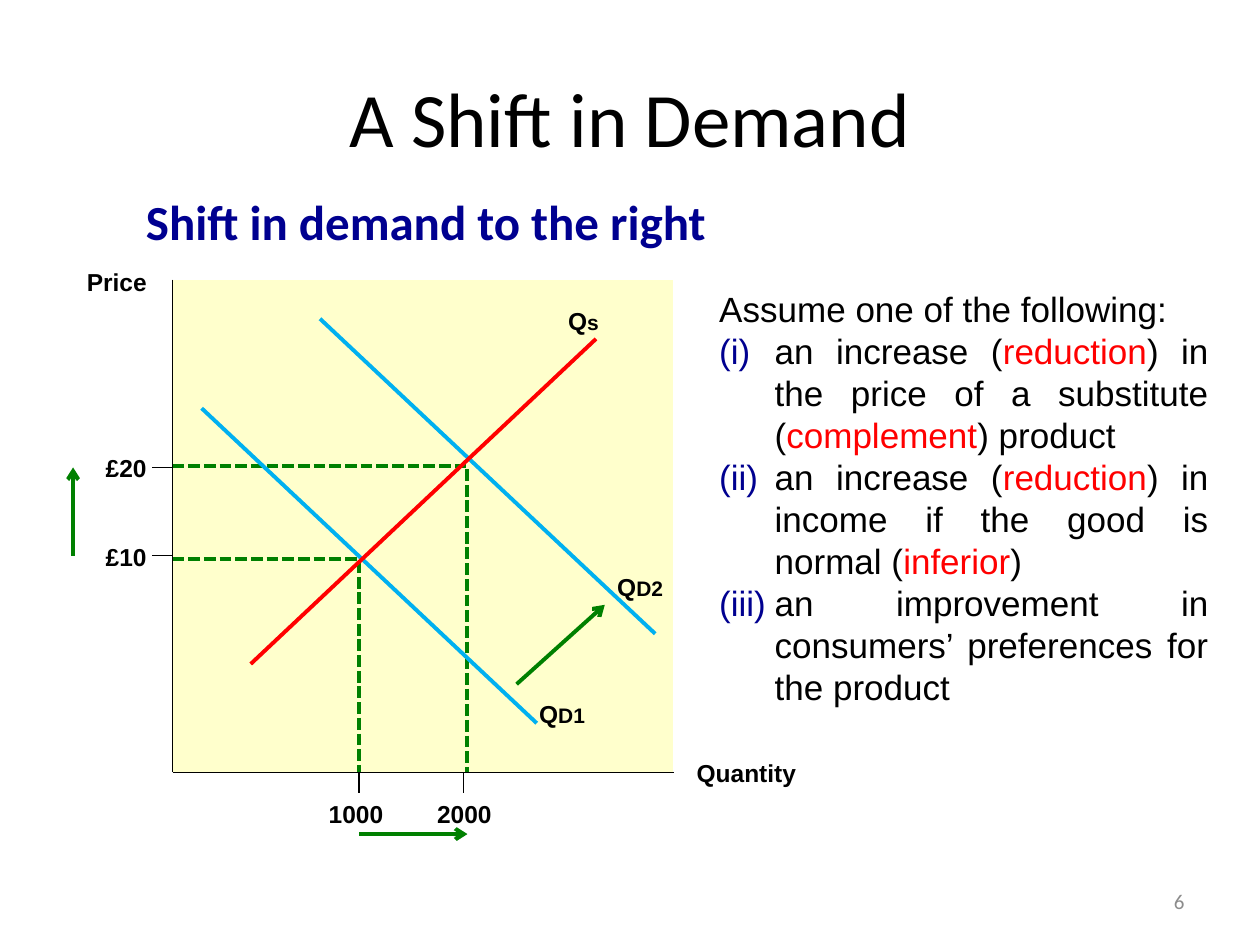
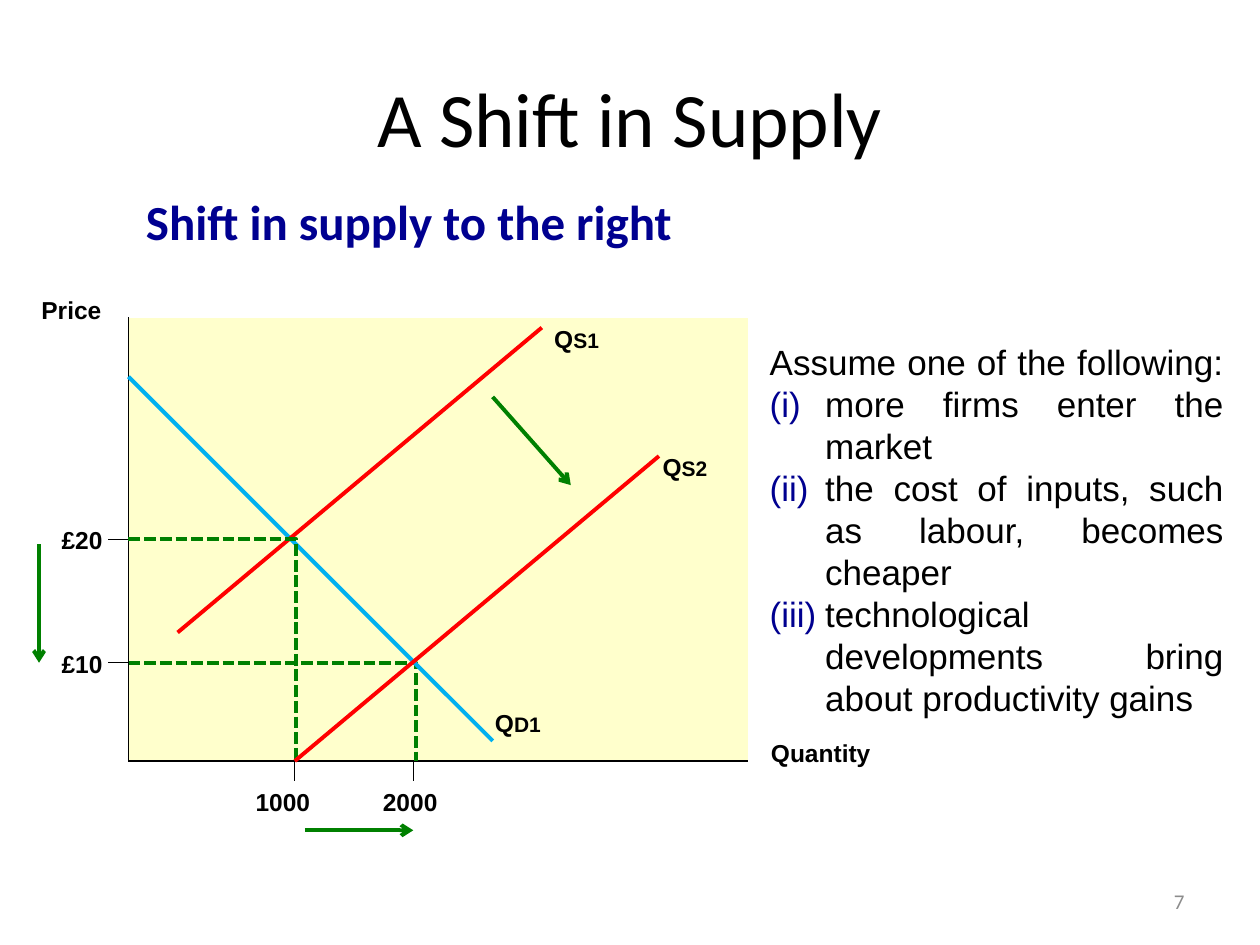
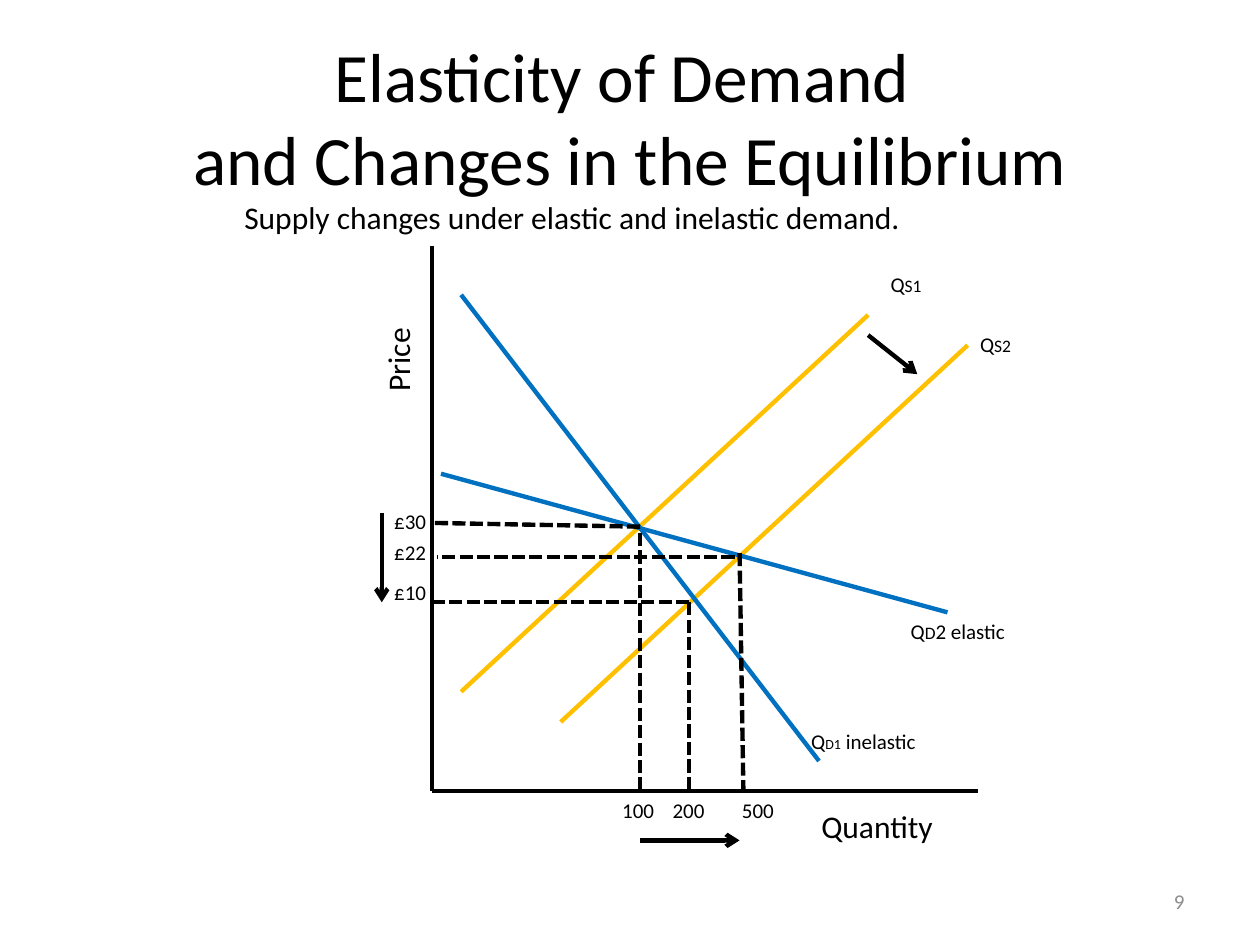
from lxml import etree
from pptx import Presentation
from pptx import util as u
from pptx.dml.color import RGBColor
from pptx.enum import dml, shapes, text
from pptx.oxml import ns

PX = 9144  # EMU in one px, 100 px to the inch
BLACK, WHITE, GREY = "000000", "FFFFFF", "8C8C8C"
NAVY, RED, GREEN, SKY = "000090", "FF0000", "008000", "00B0F0"
CREAM, GOLD, BLUE = "FFFFCC", "FFC000", "0070C0"
SANS, HEAD = "Arial", "Calibri"
MID = text.MSO_ANCHOR.MIDDLE
ALIGN = text.PP_ALIGN

# Line styles: colour, width in points, dashed, arrow at the end
SHIFT = {
    "axis": (BLACK, 0.75, False, False),
    "guide": (GREEN, 2.25, True, False),
    "move": (GREEN, 2.25, False, True),
    "demand": (SKY, 2.25, False, False),
    "supply": (RED, 2.25, False, False),
}
ELASTIC = {
    "axis": (BLACK, 2.5, False, False),
    "guide": (BLACK, 2.5, True, False),
    "move": (BLACK, 2.5, False, True),
    "demand": (BLUE, 2.5, False, False),
    "supply": (GOLD, 2.5, False, False),
}


def px(n):
    return u.Emu(round(n * PX))


def rgb(code):
    return RGBColor.from_string(code)


def sub(node, tag, **attrs):
    return etree.SubElement(node, ns.qn(tag), **attrs)


# Text
def add_run(para, words, size, font=HEAD, color=BLACK, bold=False):
    run = para.add_run()
    run.text = words
    face = run.font
    face.name, face.size, face.bold = font, u.Pt(size), bold
    face.color.rgb = rgb(color)


def add_box(slide, box, anchor=text.MSO_ANCHOR.TOP, wrap=True):
    shape = slide.shapes.add_textbox(*map(px, box))
    frame = shape.text_frame
    frame.word_wrap, frame.vertical_anchor = wrap, anchor
    return shape, frame.paragraphs[0]


def label(slide, box, runs, turn=0, wrap=True, **face):
    shape, para = add_box(slide, box, wrap=wrap)
    shape.rotation = turn
    for words, size in runs:
        add_run(para, words, size, **face)


# Lines
def line(slide, style, points):
    color, width, dashed, arrow = style
    spots = [(px(x), px(y)) for x, y in points]
    if len(spots) == 2:
        item = slide.shapes.add_connector(
            shapes.MSO_CONNECTOR.STRAIGHT, *spots[0], *spots[1])
    else:
        pen = slide.shapes.build_freeform(*spots[0], scale=1.0)
        pen.add_line_segments(spots[1:], close=False)
        item = pen.convert_to_shape()
        item.fill.background()
    item.line.color.rgb = rgb(color)
    item.line.width = u.Pt(width)
    if dashed:
        item.line.dash_style = dml.MSO_LINE.SQUARE_DOT
    if arrow:
        sub(item.line._get_or_add_ln(), "a:tailEnd", type="arrow")
    sub(item._element.spPr, "a:effectLst")


def plot(slide, box, styles, marks):
    """Draw the two axes and then the marks, measured from the box's corner."""
    left, top, wide, high = box
    axes = [("axis", (0, high), (wide, high)), ("axis", (0, 0), (0, high))]
    for name, *points in axes + marks:
        line(slide, styles[name], [(left + x, top + y) for x, y in points])


# Frame that all slides share
def frame(deck, title, number, size=44):
    slide = deck.slides.add_slide(deck.slide_layouts[6])
    _, para = add_box(slide, (50, 30, 900, 125), MID)
    para.alignment = ALIGN.CENTER
    for i, words in enumerate(title):
        if i:
            para.add_line_break()
        add_run(para, words, size)
    _, para = add_box(slide, (717, 695, 233, 40), MID)
    para.alignment = ALIGN.RIGHT
    add_run(para, str(number), 12, color=GREY)
    return slide


# Shaded graph of one shifting curve
def graph(slide, box, marks, xticks, yticks, names):
    left, top, wide, high = box
    panel = slide.shapes.add_shape(
        shapes.MSO_SHAPE.RECTANGLE, *map(px, box))
    panel.shadow.inherit = False
    panel.fill.solid()
    panel.fill.fore_color.rgb = rgb(CREAM)
    panel.line.color.rgb = rgb(WHITE)
    panel.line.width = u.Pt(0.75)

    ticks = [("axis", (x, high), (x, high + 16)) for x, _, _ in xticks]
    ticks += [("axis", (-16, y), (0, y)) for y, _ in yticks]
    plot(slide, box, SHIFT, ticks + marks)

    tags = [(x, high + 16, 78, word, "") for _, x, word in xticks]
    tags += [(-63, y - 16, 55, word, "") for y, word in yticks]
    for x, y, width, word, low in tags + names:
        runs = [(word, 14)] + ([(low, 12)] if low else [])
        label(slide, (left + x, top + y, width, 34), runs,
              font=SANS, bold=True)


# Numbered list of causes; every second piece of an item is red
def causes(slide, box, items):
    shape, para = add_box(slide, box)
    para.alignment = ALIGN.JUSTIFY
    para._p.get_or_add_pPr().set("marL", str(px(18)))
    add_run(para, "Assume one of the following: ", 20, SANS)
    for item in items:
        para = shape.text_frame.add_paragraph()
        para.alignment = ALIGN.JUSTIFY
        props = para._p.get_or_add_pPr()
        props.set("marL", str(px(62)))
        props.set("indent", str(px(-44)))
        sub(sub(props, "a:buClr"), "a:srgbClr", val=NAVY)
        sub(props, "a:buFont", typeface=SANS)
        sub(props, "a:buAutoNum", type="romanLcParenBoth")
        for i, words in enumerate(item):
            add_run(para, words, 20, SANS, RED if i % 2 else BLACK)


def heading(slide, words):
    label(slide, (106, 147, 886, 55), [(words, 28)], color=NAVY, bold=True)


def demand(deck):
    slide = frame(deck, ["A Shift in Demand"], 6)
    heading(slide, "Shift in demand to the right")
    graph(
        slide, (137, 222, 398, 391),
        marks=[
            ("guide", (0, 222), (148, 222), (148, 391)),
            ("guide", (0, 148), (234, 148), (234, 391)),
            ("demand", (23, 102), (289, 352)),
            ("demand", (117, 31), (383, 281)),
            ("move", (273, 321), (343, 258)),
            ("move", (-79, 219), (-79, 149)),
            ("move", (148, 440), (234, 440)),
            ("supply", (62, 305), (336, 47)),
        ],
        xticks=[(148, 114, "1000"), (231, 200, "2000")],
        yticks=[(219, "£10"), (149, "£20")],
        names=[
            (281, 328, 62, "Q", "D1"),
            (343, 227, 62, "Q", "D2"),
            (304, 16, 62, "Q", "s"),
            (-78, -15, 78, "Price", ""),
            (406, 375, 109, "Quantity", ""),
        ])
    causes(slide, (543, 223, 426, 347), [
        ["an increase (", "reduction", ") in the price of a substitute (",
         "complement", ") product"],
        ["an increase (", "reduction", ") in income if the good is normal (",
         "inferior", ")"],
        ["an improvement in consumers’ preferences for the product"],
    ])


def supply(deck):
    slide = frame(deck, ["A Shift in Supply"], 7)
    heading(slide, "Shift in supply to the right")
    graph(
        slide, (102, 252, 492, 352),
        marks=[
            ("guide", (0, 274), (228, 274), (228, 352)),
            ("demand", (0, 47), (289, 336)),
            ("move", (289, 63), (351, 133)),
            ("move", (-71, 180), (-71, 274)),
            ("move", (140, 407), (226, 407)),
            ("supply", (39, 250), (328, 8)),
            ("guide", (0, 176), (133, 176), (133, 352)),
            ("supply", (132, 352), (421, 110)),
        ],
        xticks=[(132, 91, "1000"), (226, 192, "2000")],
        yticks=[(274, "£10"), (176, "£20")],
        names=[
            (281, 305, 62, "Q", "D1"),
            (328, 0, 62, "Q", "S1"),
            (414, 102, 62, "Q", "S2"),
            (-79, -23, 78, "Price", ""),
            (500, 329, 109, "Quantity", ""),
        ])
    causes(slide, (583, 265, 398, 313), [
        ["more firms enter the market"],
        ["the cost of inputs, such as labour, becomes cheaper"],
        ["technological developments bring about productivity gains"],
    ])


# Open graph of elastic and inelastic demand
def elastic(deck):
    slide = frame(deck, ["Elasticity of Demand ",
                         "and Changes in the Equilibrium"], 9, 39.6)
    label(slide, (184, 152, 621, 40),
          [("Supply changes under elastic and inelastic demand.", 18)])
    box = left, top, _, high = 343, 195, 433, 433
    plot(slide, box, ELASTIC, [
        ("supply", (23, 354), (346, 55)),
        ("supply", (102, 378), (425, 79)),
        ("demand", (23, 39), (307, 409)),
        ("demand", (7, 181), (409, 291)),
        ("guide", (165, 228), (165, high)),
        ("guide", (244, 244), (247, high)),
        ("guide", (204, 283), (204, high)),
        ("guide", (165, 223), (0, 220)),
        ("guide", (204, 283), (0, 283)),
        ("guide", (240, 247), (4, 247)),
        ("move", (346, 71), (385, 102)),
        ("move", (-40, 212), (-40, 283)),
        ("move", (165, 472), (244, 472)),
    ])

    # Curve names
    for x, y, width, runs, wrap in [
        (354, 16, 63, [("Q", 12), ("S1", 10)], True),
        (425, 63, 118, [("Q", 12), ("S2", 10)], True),
        (291, 378, 104, [("Q", 12), ("D1", 8), (" inelastic", 12)], False),
        (370, 291, 134, [("Q", 12), ("D", 10), ("2 elastic", 12)], True),
    ]:
        label(slide, (left + x, top + y, width, 30), runs, wrap=wrap)

    # Axis names and values
    label(slide, (left - 75, top + 58, 95, 40), [("Price", 18)], turn=270)
    label(slide, (left + 299, top + 441, 134, 40), [("Quantity", 18)])
    for y, word in [(260, "£10"), (228, "£22"), (204, "£30")]:
        label(slide, (left - 40, top + y, 55, 30), [(word, 12)])
    for x, word in [(141, "100"), (181, "200"), (236, "500")]:
        label(slide, (left + x, top + high, 63, 30), [(word, 12)])


def main():
    deck = Presentation()
    deck.slide_width, deck.slide_height = px(1000), px(750)
    for build in (demand, supply, elastic):
        build(deck)
    deck.save("out.pptx")


if __name__ == "__main__":
    main()
